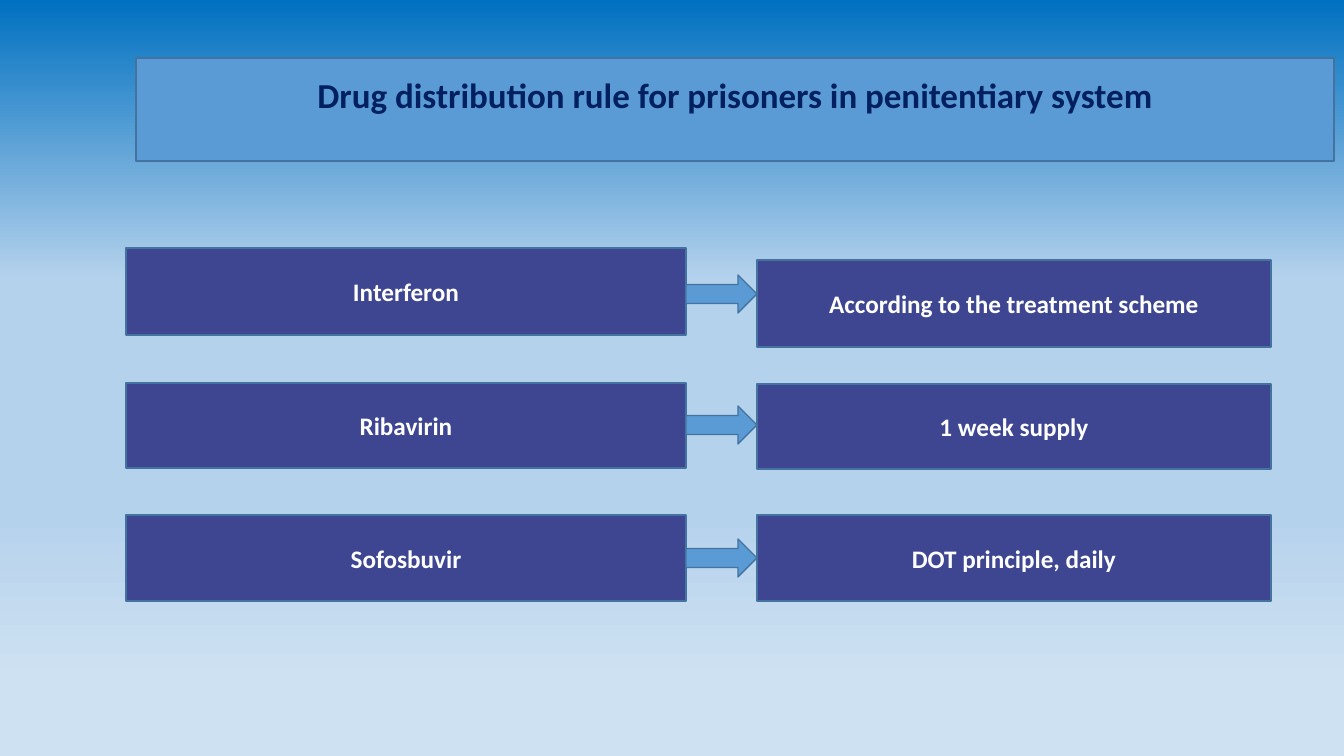
import pptx
import pptx.util
import pptx.dml.color
import pptx.enum.shapes
import pptx.enum.text
import pptx.oxml
import pptx.oxml.ns

RGBColor = pptx.dml.color.RGBColor
SHAPES = pptx.enum.shapes.MSO_SHAPE

# Content
TITLE = "Drug distribution rule for prisoners in penitentiary system"
# drug, rule, drug box top, rule box top, arrow top, box height
ROWS = [
    ("Interferon", "According to the treatment scheme", 248, 260, 275, 87),
    ("Ribavirin", "1 week supply", 383, 384, 406, 85),
    ("Sofosbuvir", "DOT principle, daily", 515, 515, 539, 86),
]

# Colours
NAVY = RGBColor(0x00, 0x20, 0x60)
INDIGO = RGBColor(0x3E, 0x46, 0x92)
BLUE = RGBColor(0x5B, 0x9B, 0xD5)
EDGE = RGBColor(0x43, 0x73, 0x9E)
WHITE = RGBColor(0xFF, 0xFF, 0xFF)
SKY = RGBColor(0xB5, 0xD2, 0xEC)
BACKGROUND_STOPS = [
    (0, RGBColor(0x00, 0x70, 0xC0)),
    (37, SKY),
    (68, SKY),
    (90, RGBColor(0xCE, 0xE1, 0xF2)),
]

# Layout in px
PAGE_WIDTH, PAGE_HEIGHT = 1344, 756
DRUG_LEFT, DRUG_WIDTH = 126, 560
RULE_LEFT, RULE_WIDTH = 757, 514
ARROW_LEFT = DRUG_LEFT + DRUG_WIDTH
ARROW_WIDTH, ARROW_HEIGHT = RULE_LEFT - ARROW_LEFT, 38
TITLE_BOX = (136, 58, 1198, 103)
TITLE_BOTTOM_MARGIN = 36

TITLE_FONT = {"name": "Calibri", "size": pptx.util.Pt(25), "bold": True}
BOX_FONT = {"name": "Calibri", "size": pptx.util.Pt(18), "bold": True}


def px(length):
    return round(length * 914400 / 100.8)


def add_block(page, kind, bounds, fill):
    block = page.shapes.add_shape(kind, *map(px, bounds))
    block.shadow.inherit = False
    block.fill.solid()
    block.fill.fore_color.rgb = fill
    block.line.color.rgb = EDGE
    block.line.width = pptx.util.Pt(1)
    return block


def add_text_box(page, bounds, fill, text, font, color):
    box = add_block(page, SHAPES.RECTANGLE, bounds, fill)
    box.text_frame.word_wrap = True
    box.text_frame.vertical_anchor = pptx.enum.text.MSO_ANCHOR.MIDDLE
    para = box.text_frame.paragraphs[0]
    para.alignment = pptx.enum.text.PP_ALIGN.CENTER
    span = para.add_run()
    span.text = text
    for name, value in font.items():
        setattr(span.font, name, value)
    span.font.color.rgb = color
    return box


def paint_background(page):
    fill = page.background.fill
    fill.gradient()
    fill.gradient_angle = 270
    ns = pptx.oxml.ns.qn
    stops = page.background._cSld.find(".//" + ns("a:gsLst"))
    for stop in list(stops):
        stops.remove(stop)
    for percent, color in BACKGROUND_STOPS:
        stops.append(pptx.oxml.parse_xml(
            f'<a:gs {pptx.oxml.ns.nsdecls("a")} pos="{percent * 1000}">'
            f'<a:srgbClr val="{color}"/></a:gs>'))


def main():
    deck = pptx.Presentation()
    deck.slide_width, deck.slide_height = px(PAGE_WIDTH), px(PAGE_HEIGHT)
    page = deck.slides.add_slide(deck.slide_layouts[6])
    paint_background(page)

    # Title bar, with its text raised above the middle
    title = add_text_box(page, TITLE_BOX, BLUE, TITLE, TITLE_FONT, NAVY)
    title.text_frame.margin_bottom = px(TITLE_BOTTOM_MARGIN)

    # Each drug points to its rule
    for drug, rule, drug_top, rule_top, arrow_top, height in ROWS:
        for text, left, top, width in (
            (drug, DRUG_LEFT, drug_top, DRUG_WIDTH),
            (rule, RULE_LEFT, rule_top, RULE_WIDTH),
        ):
            add_text_box(page, (left, top, width, height), INDIGO, text, BOX_FONT, WHITE)
        add_block(page, SHAPES.RIGHT_ARROW,
                  (ARROW_LEFT, arrow_top, ARROW_WIDTH, ARROW_HEIGHT), BLUE)

    deck.save("out.pptx")


if __name__ == "__main__":
    main()
